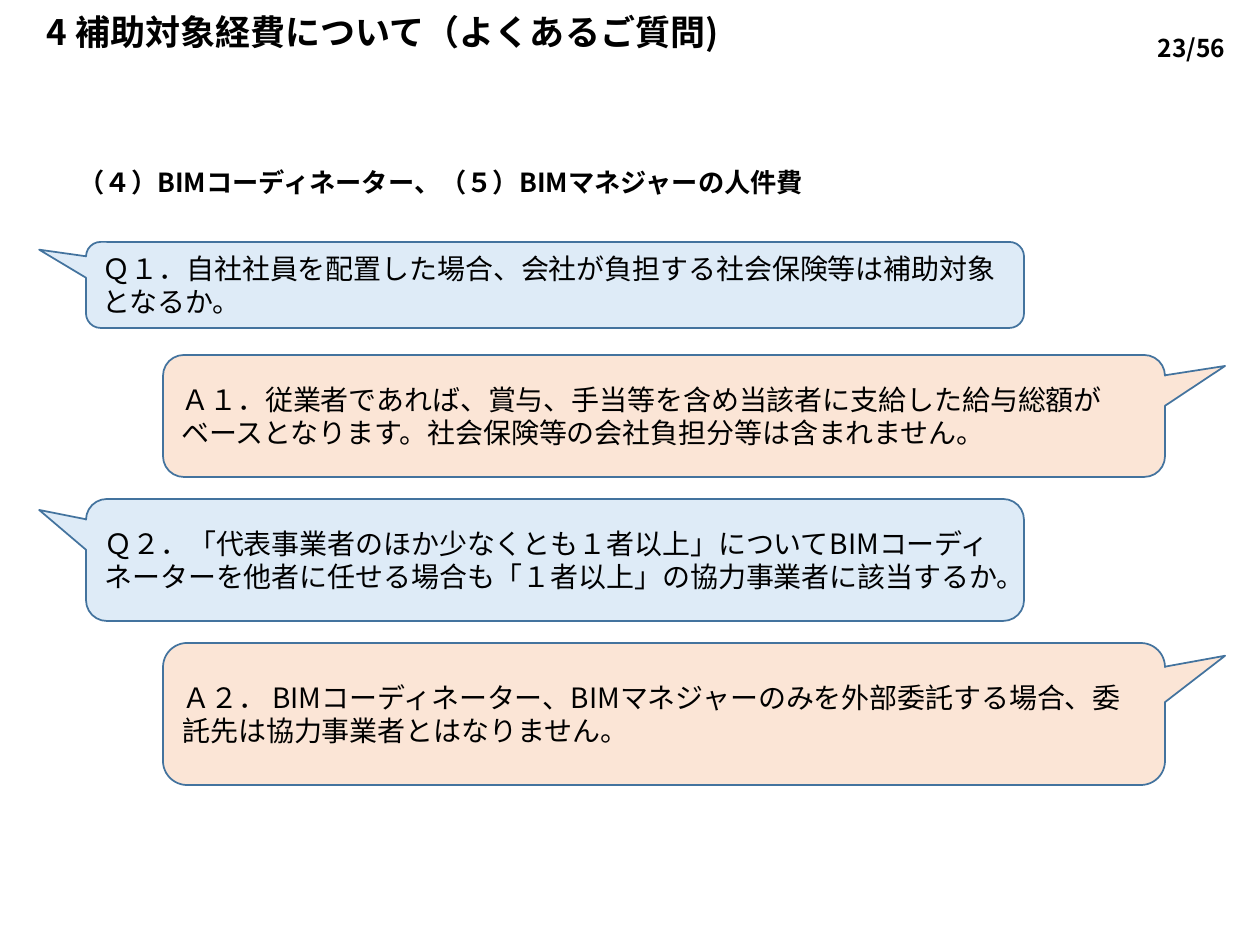
from lxml.etree import SubElement
from pptx import Presentation
from pptx.dml.color import RGBColor
from pptx.enum.shapes import MSO_SHAPE
from pptx.enum.text import MSO_ANCHOR, MSO_AUTO_SIZE, PP_ALIGN
from pptx.oxml.ns import qn
from pptx.util import Pt

EMU_PER_PX = 914400 / 126
FONT = "Noto Sans CJK JP"
BLACK, OUTLINE = "000000", "43739E"
QUESTION = {"left": 86, "width": 938, "fill": "DEEBF7", "tail": (-0.55, -0.41, 0.17)}
ANSWER = {"left": 163, "width": 1002, "fill": "FBE5D6", "tail": (0.56, -0.41, 0.17)}
CALLOUTS = [
    (QUESTION, 242, 86,
     "Ｑ１．自社社員を配置した場合、会社が負担する社会保険等は補助対象となるか。"),
    (ANSWER, 355, 122,
     "Ａ１．従業者であれば、賞与、手当等を含め当該者に支給した給与総額がベースとなります。"
     "社会保険等の会社負担分等は含まれません。"),
    (QUESTION, 499, 122,
     "Ｑ２．「代表事業者のほか少なくとも１者以上」についてBIMコーディネーターを"
     "他者に任せる場合も「１者以上」の協力事業者に該当するか。"),
    (ANSWER, 643, 142,
     "Ａ２． BIMコーディネーター、BIMマネジャーのみを外部委託する場合、"
     "委託先は協力事業者とはなりません。"),
]


def px(length):
    return round(length * EMU_PER_PX)


def color(hex_string):
    return RGBColor.from_string(hex_string)


def place(shape, box):
    for name, length in zip(("left", "top", "width", "height"), box):
        setattr(shape, name, px(length))


def write(shape, text, size, bold=False, anchor=MSO_ANCHOR.MIDDLE, **paragraph_format):
    """Fill the shape with one formatted paragraph and return it."""
    frame = shape.text_frame
    frame_format = {"word_wrap": True, "auto_size": MSO_AUTO_SIZE.NONE,
                    "vertical_anchor": anchor}
    for name, value in frame_format.items():
        setattr(frame, name, value)
    paragraph = frame.paragraphs[0]
    paragraph_format = {"alignment": PP_ALIGN.LEFT, "space_before": Pt(0),
                        **paragraph_format}
    for name, value in paragraph_format.items():
        setattr(paragraph, name, value)
    run = paragraph.add_run()
    run.text = text
    for name, value in {"size": Pt(size), "bold": bold, "name": FONT}.items():
        setattr(run.font, name, value)
    run.font.color.rgb = color(BLACK)
    SubElement(run.font._element, qn("a:ea"), typeface=FONT)
    return paragraph


def add_heading(slide, box):
    left, top, width, height = box
    title = slide.shapes.title
    place(title, (left, top, 1023, height))
    write(title, "4 補助対象経費について（よくあるご質問)", 20, True, line_spacing=0.9)
    page_number = slide.shapes.add_textbox(0, 0, 0, 0)
    place(page_number, (left + width - 137, top, 137, 54))
    write(page_number, "23/56", 14, True, alignment=PP_ALIGN.CENTER, line_spacing=Pt(40))


def add_topic(slide, box):
    body = slide.placeholders[1]
    place(body, box)
    paragraph = write(body, "（４）BIMコーディネーター、（５）BIMマネジャーの人件費", 15, True,
                      MSO_ANCHOR.TOP, line_spacing=0.9)
    properties = paragraph._p.get_or_add_pPr()
    properties.set("marL", str(px(32)))
    properties.set("indent", "0")
    SubElement(properties, qn("a:buNone"))


def add_callout(slide, box, fill, tail, text):
    callout = slide.shapes.add_shape(MSO_SHAPE.ROUNDED_RECTANGULAR_CALLOUT, 0, 0, 0, 0)
    place(callout, box)
    for index, value in enumerate(tail):
        callout.adjustments[index] = value
    callout.shadow.inherit = False
    callout.fill.solid()
    callout.fill.fore_color.rgb = color(fill)
    callout.line.color.rgb = color(OUTLINE)
    callout.line.width = Pt(1)
    write(callout, text, 16)


def main():
    presentation = Presentation()
    presentation.slide_width, presentation.slide_height = px(1260), px(945)
    slide = presentation.slides.add_slide(presentation.slide_layouts[1])
    add_heading(slide, (34, 0, 1226, 68))
    add_topic(slide, (34, 164, 1191, 687))
    for style, top, height, text in CALLOUTS:
        box = (style["left"], top, style["width"], height)
        add_callout(slide, box, style["fill"], style["tail"], text)
    presentation.save("out.pptx")


if __name__ == "__main__":
    main()
